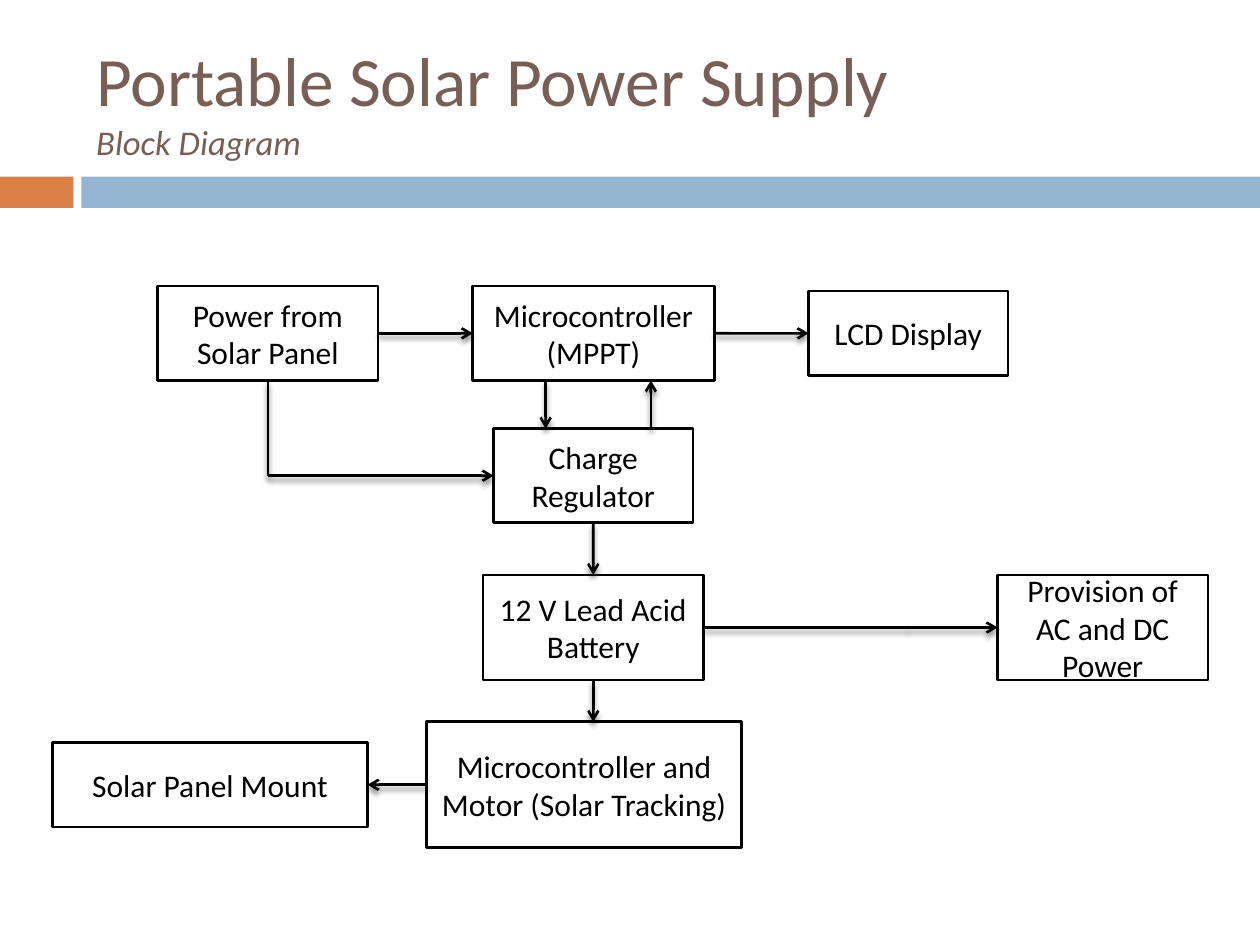
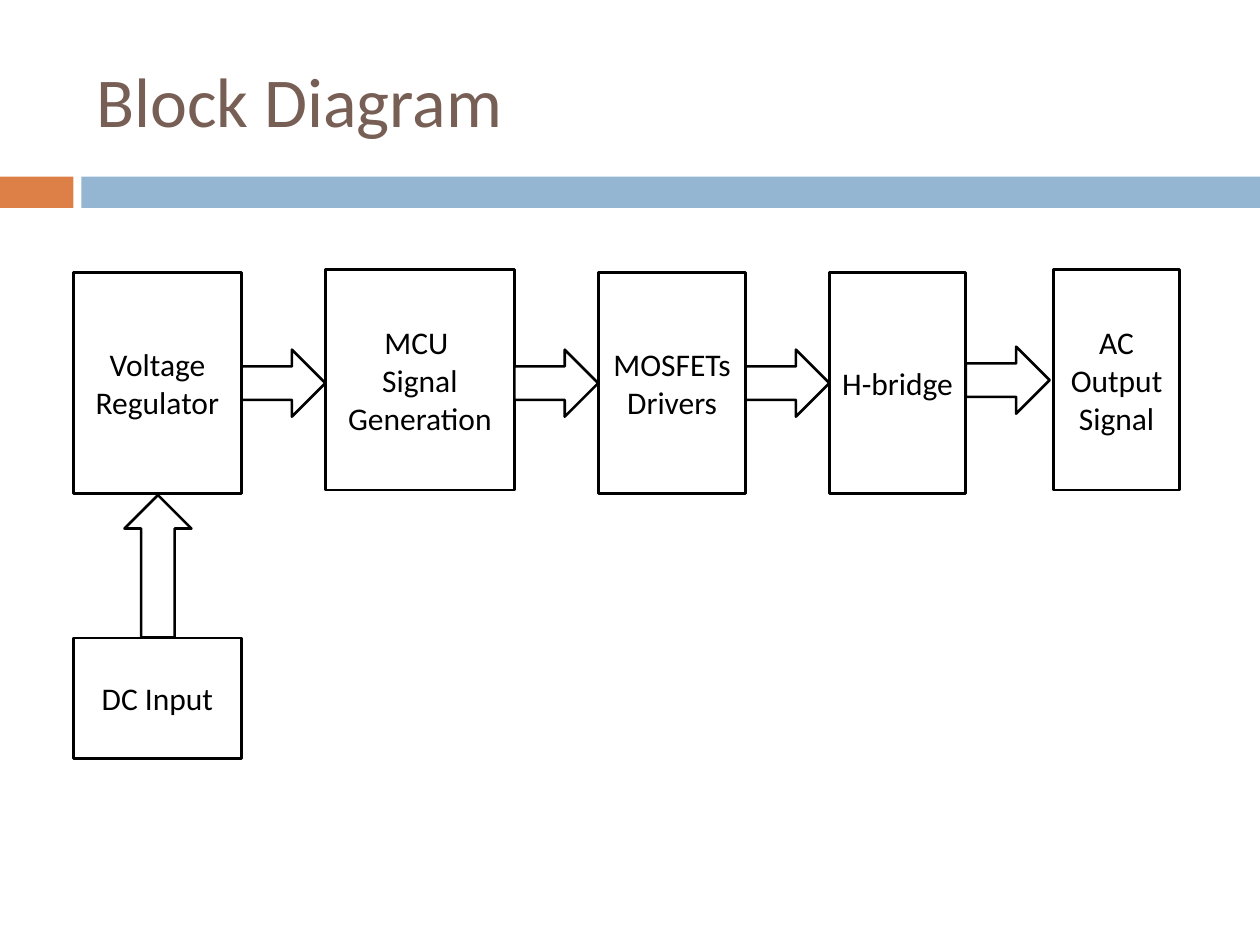
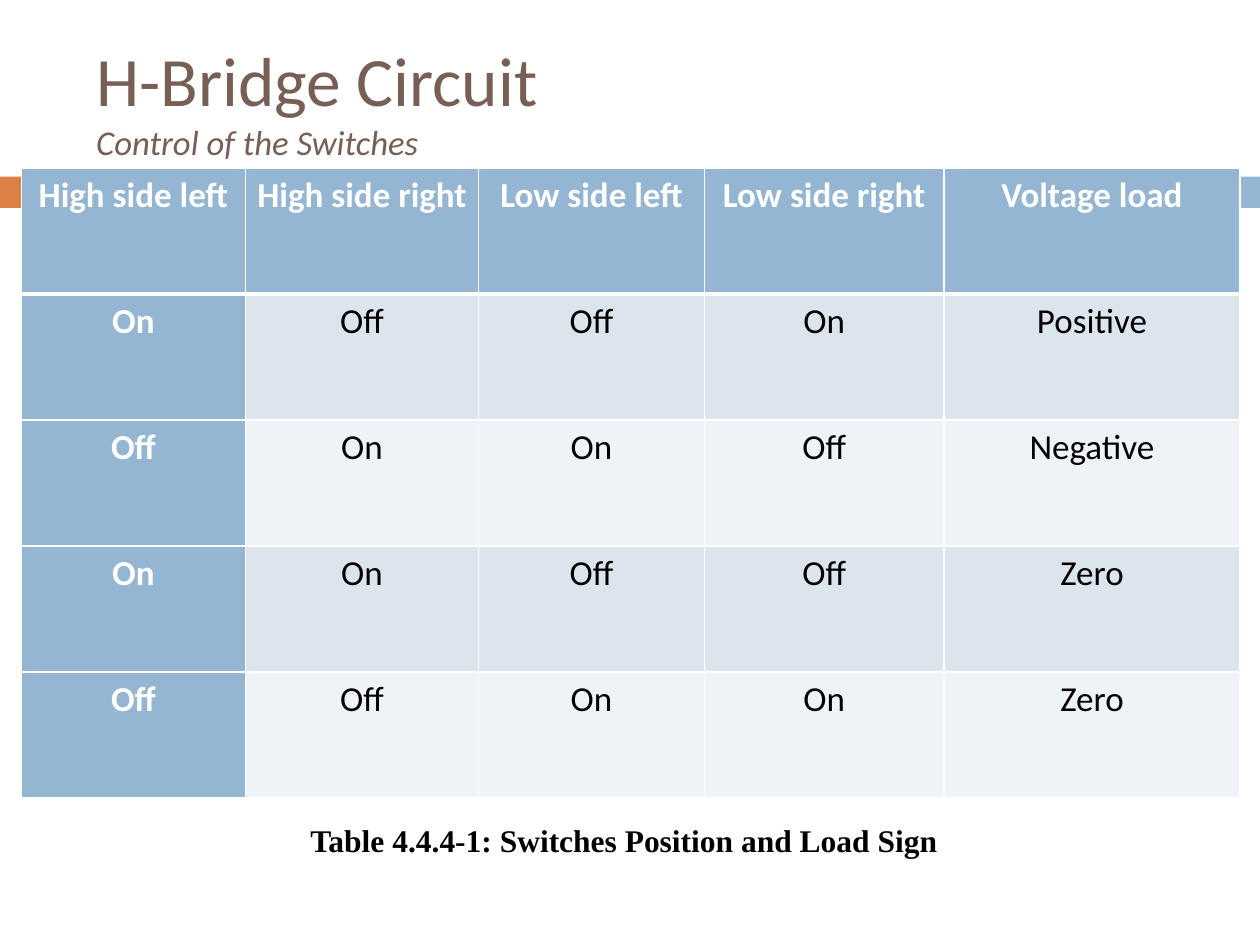
from pptx import Presentation
from pptx.dml.color import RGBColor
from pptx.enum.shapes import MSO_CONNECTOR, MSO_SHAPE
from pptx.enum.text import MSO_ANCHOR, PP_ALIGN
from pptx.oxml import parse_xml
from pptx.oxml.ns import nsdecls
from pptx.util import Cm, Pt

HUES = {"orange": "DD8047", "blue": "94B6D2", "brown": "775F55",
        "white": "FFFFFF", "black": "000000",
        "pale": "DCE5EE", "faint": "EEF3F7"}


def hue(name):
    return RGBColor.from_string(HUES[name])


def box(page, at, text="", kind=MSO_SHAPE.RECTANGLE, fill="white", edge="black"):
    """Add a filled shape, outlined unless edge is None, with centred text."""
    shape = page.shapes.add_shape(kind, *map(Cm, at))
    shape.shadow.inherit = False
    shape.fill.solid()
    shape.fill.fore_color.rgb = hue(fill)
    if edge:
        shape.line.color.rgb = hue(edge)
        shape.line.width = Pt(1.5)
    else:
        shape.line.fill.background()
    if text:
        frame = shape.text_frame
        frame.word_wrap = True
        frame.vertical_anchor = MSO_ANCHOR.MIDDLE
        frame.text = text
        for para in frame.paragraphs:
            para.alignment = PP_ALIGN.CENTER
            para.font.name = "Calibri"
            para.font.size = Pt(18)
            para.font.color.rgb = hue("black")
    return shape


deck = Presentation()
deck.slide_width, deck.slide_height = Cm(25.4), Cm(19.05)

# Bands and titles
heads = [("Portable Solar Power Supply", "Block Diagram"),
         ("Block Diagram", ""),
         ("H-Bridge Circuit", "Control of the Switches")]
pages = []
for title, sub in heads:
    page = deck.slides.add_slide(deck.slide_layouts[6])
    pages.append(page)
    box(page, (0, 3.56, 1.48, 0.63), fill="orange", edge=None)
    box(page, (1.64, 3.56, 23.76, 0.63), fill="blue", edge=None)
    frame = page.shapes.add_textbox(Cm(1.69), Cm(0.64), Cm(22.65), Cm(2.75)).text_frame
    frame.word_wrap = True
    frame.vertical_anchor = MSO_ANCHOR.MIDDLE
    para = frame.paragraphs[0]
    para.font.name = "Calibri"
    para.font.color.rgb = hue("brown")
    run = para.add_run()
    run.text = title
    run.font.size = Pt(39.6 if sub else 40)
    if sub:
        para.add_line_break()
        run = para.add_run()
        run.text = sub
        run.font.size = Pt(19.8)
        run.font.italic = True
supply, chain, bridge = pages

# Power supply: blocks and arrows
blocks = {
    "charge": ((9.95, 8.64, 4.02, 1.9), "Charge Regulator"),
    "mppt": ((9.53, 5.77, 4.87, 1.9), "Microcontroller (MPPT)"),
    "lcd": ((16.3, 5.87, 4.02, 1.7), "LCD Display"),
    "cell": ((9.74, 11.59, 4.44, 2.12), "12 V Lead Acid Battery"),
    "track": ((8.6, 14.55, 6.35, 2.54), "Microcontroller and Motor (Solar Tracking)"),
    "mount": ((1.06, 14.97, 6.35, 1.7), "Solar Panel Mount"),
    "panel": ((3.18, 5.77, 4.44, 1.9), "Power from Solar Panel"),
    "outlet": ((20.11, 11.59, 4.24, 2.12), "Provision of AC and DC Power"),
}
parts = {name: box(supply, at, text) for name, (at, text) in blocks.items()}

# Each end is a point, or a block and the side it joins
TOP, LEFT, LOW, RIGHT = range(4)
bend, split = (5.4, 9.59), (18.31, 12.65)
links = [
    (("panel", RIGHT), ("mppt", LEFT), True),
    (("mppt", RIGHT), ("lcd", LEFT), True),
    ((11, 7.67), (11, 8.64), True),
    ((13.12, 8.64), (13.12, 7.67), True),
    (("charge", LOW), ("cell", TOP), True),
    (("cell", LOW), (11.96, 14.55), True),
    (("cell", RIGHT), split, False),
    (split, ("outlet", LEFT), True),
    (("track", LEFT), ("mount", RIGHT), True),
    (bend, ("charge", LEFT), True),
    (("panel", LOW), bend, False),
]
for start, end, tip in links:
    spots = [(0, 0) if spot[0] in parts else spot for spot in (start, end)]
    line = supply.shapes.add_connector(
        MSO_CONNECTOR.STRAIGHT, *[Cm(n) for spot in spots for n in spot])
    if start[0] in parts:
        line.begin_connect(parts[start[0]], start[1])
    if end[0] in parts:
        line.end_connect(parts[end[0]], end[1])
    line.line.color.rgb = hue("black")
    line.line.width = Pt(1.5)
    if tip:
        line.line._get_or_add_ln().append(
            parse_xml(f'<a:tailEnd {nsdecls("a")} type="arrow"/>'))
    line._element.spPr.append(parse_xml(
        f'<a:effectLst {nsdecls("a")}>'
        f'<a:outerShdw blurRad="{Pt(3)}" dist="{Pt(2.4)}" dir="5400000" rotWithShape="0">'
        f'<a:srgbClr val="{HUES["black"]}"><a:alpha val="45000"/></a:srgbClr>'
        '</a:outerShdw></a:effectLst>'))

# Inverter chain: left, top, width, text
stages = [(1.48, 5.5, 3.39, "Voltage Regulator"),
          (6.56, 5.43, 3.81, "MCU \nSignal Generation"),
          (12.07, 5.5, 2.96, "MOSFETs Drivers"),
          (16.72, 5.5, 2.75, "H-bridge"),
          (21.24, 5.43, 2.54, "AC Output Signal")]
for left, top, wide, text in stages:
    box(chain, (left, top, wide, 4.45), text)
box(chain, (1.48, 12.86, 3.39, 2.43), "DC Input")
for (left, _, wide, _), top in zip(stages, (7.05, 7.05, 7.05, 6.99)):
    box(chain, (left + wide, top, 1.69, 1.35), kind=MSO_SHAPE.RIGHT_ARROW)
rise = box(chain, (1.75, 10.74, 2.87, 1.35), kind=MSO_SHAPE.RIGHT_ARROW)
rise.rotation = 270

# Switch table
rows = [("High side left", "High side right", "Low side left", "Low side right",
         "Voltage load"),
        ("On", "Off", "Off", "On", "Positive"),
        ("Off", "On", "On", "Off", "Negative"),
        ("On", "On", "Off", "Off", "Zero"),
        ("Off", "Off", "On", "On", "Zero")]
wides = (4.52, 4.7, 4.55, 4.83, 5.97)
table = bridge.shapes.add_table(len(rows), len(wides), Cm(0.43), Cm(3.39),
                                Cm(sum(wides)), Cm(2.54 * len(rows))).table
for col, wide in zip(table.columns, wides):
    col.width = Cm(wide)
for r, row in enumerate(rows):
    table.rows[r].height = Cm(2.54)
    for c, text in enumerate(row):
        cell = table.cell(r, c)
        cell.margin_left = cell.margin_right = Cm(0.19)
        cell.margin_top = cell.margin_bottom = 0
        for side in "LRTB":
            thick = 3 if (r, side) in ((0, "B"), (1, "T")) else 1
            cell._tc.get_or_add_tcPr().append(parse_xml(
                f'<a:ln{side} {nsdecls("a")} w="{Pt(thick)}"><a:solidFill>'
                f'<a:srgbClr val="{HUES["white"]}"/></a:solidFill></a:ln{side}>'))
        head = r == 0 or c == 0
        cell.fill.solid()
        cell.fill.fore_color.rgb = hue("blue" if head else "pale" if r % 2 else "faint")
        cell.text = text
        para = cell.text_frame.paragraphs[0]
        para.alignment = PP_ALIGN.CENTER
        para.line_spacing = 1.15
        para.font.name = "Calibri"
        para.font.size = Pt(20)
        para.font.bold = head
        para.font.color.rgb = hue("white" if head else "black")

# Caption
frame = bridge.shapes.add_textbox(Cm(5.94), Cm(16.43), Cm(13.28), Cm(1.02)).text_frame
frame.word_wrap = False
frame.vertical_anchor = MSO_ANCHOR.MIDDLE
frame.text = "Table 4.4.4-1: Switches Position and Load Sign"
para = frame.paragraphs[0]
para.alignment = PP_ALIGN.CENTER
para.font.name = "Times New Roman"
para.font.size = Pt(18)
para.font.bold = True
para.font.color.rgb = hue("black")

deck.save("out.pptx")
